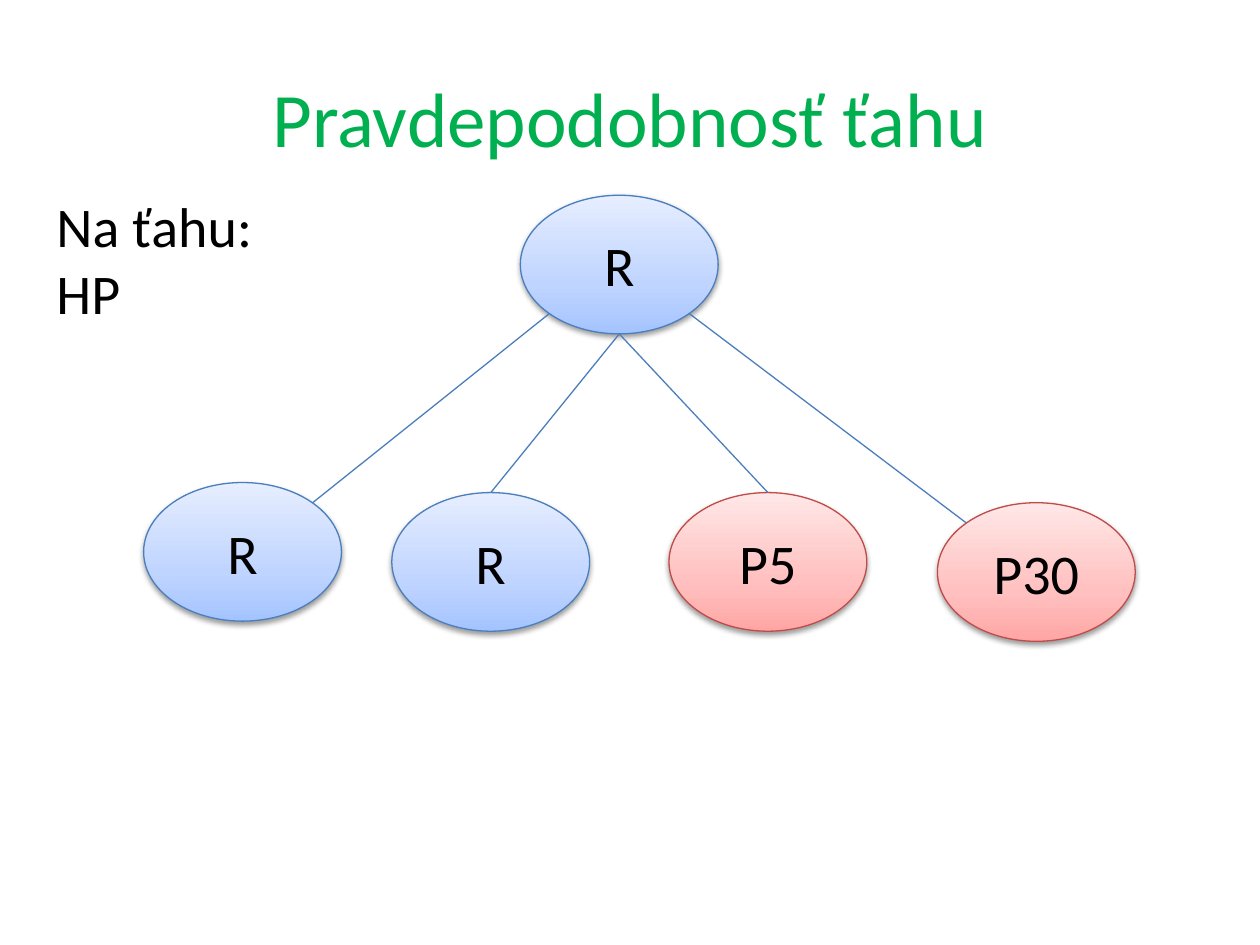
from copy import deepcopy
from math import cos, radians, sin

from lxml.etree import SubElement
from pptx import Presentation
from pptx.dml.color import RGBColor
from pptx.enum.shapes import MSO_CONNECTOR, MSO_SHAPE
from pptx.enum.text import MSO_ANCHOR, MSO_AUTO_SIZE, PP_ALIGN
from pptx.oxml import parse_xml
from pptx.oxml.ns import nsdecls, qn
from pptx.util import Pt

PX = 9144  # 100 px to the inch
FONT = "Calibri"
COLORS = {
    "title": "00B050",
    "text": "000000",
    "blue_line": "4B7EBC",
    "red_line": "BF4C48",
    "shadow": "000000",
}
GRADIENTS = {
    "blue": ((0, "A4C4FF"), (35, "BFD4FF"), (100, "E6EEFF")),
    "red": ((0, "FFA6A5"), (35, "FFC0BF"), (100, "FFE7E7")),
}
NODE_WIDTH, NODE_HEIGHT = 157, 110

# Connection sites of an ellipse, counted counter-clockwise from the top
TOP, TOP_LEFT, BOTTOM_LEFT, BOTTOM, BOTTOM_RIGHT, TOP_RIGHT = 0, 1, 3, 4, 5, 7

# Label, colour, left, top, site on the root, site on the child
CHILDREN = (
    ("R", "blue", 0, 228, BOTTOM_LEFT, TOP_RIGHT),
    ("R", "blue", 197, 236, BOTTOM, TOP),
    ("P5", "red", 417, 236, BOTTOM, TOP),
    ("P30", "red", 630, 244, BOTTOM_RIGHT, TOP_LEFT),
)


def place(shape, left, top, width, height):
    shape.left, shape.top = left * PX, top * PX
    shape.width, shape.height = width * PX, height * PX


def add_text(paragraph, text, size, color, alignment):
    paragraph.alignment = alignment
    run = paragraph.add_run()
    run.text = text
    run.font.name = FONT
    run.font.size = Pt(size)
    run.font.color.rgb = RGBColor.from_string(COLORS[color])


def fill_gradient(shape, stops):
    """Fill from bottom to top through any number of stops."""
    shape.fill.gradient()
    shape.fill.gradient_angle = 90
    stop_list = shape._element.spPr.find(".//" + qn("a:gsLst"))
    for stop in list(stop_list):
        stop_list.remove(stop)
    for percent, color in stops:
        stop = SubElement(stop_list, qn("a:gs"), pos=str(percent * 1000))
        SubElement(stop, qn("a:srgbClr"), val=color)


def add_shadow(shape):
    shape._element.spPr.append(parse_xml(
        f'<a:effectLst {nsdecls("a")}>'
        '<a:outerShdw blurRad="40000" dist="20000" dir="5400000" rotWithShape="0">'
        f'<a:srgbClr val="{COLORS["shadow"]}"><a:alpha val="38000"/></a:srgbClr>'
        '</a:outerShdw></a:effectLst>'))


def add_node(slide, label, color, left, top):
    node = slide.shapes.add_shape(MSO_SHAPE.OVAL, 0, 0, 0, 0)
    place(node, left, top, NODE_WIDTH, NODE_HEIGHT)
    fill_gradient(node, GRADIENTS[color])
    node.line.color.rgb = RGBColor.from_string(COLORS[color + "_line"])
    node.line.width = Pt(0.75)
    add_shadow(node)
    node.text_frame.vertical_anchor = MSO_ANCHOR.MIDDLE
    add_text(node.text_frame.paragraphs[0], label, 32, "text", PP_ALIGN.CENTER)
    return node


def site_point(node, site):
    angle = radians(90 + 45 * site)
    return (round(node.left + node.width / 2 * (1 + cos(angle))),
            round(node.top + node.height / 2 * (1 - sin(angle))))


def add_branch(slide, parent, parent_site, child, child_site):
    branch = slide.shapes.add_connector(
        MSO_CONNECTOR.STRAIGHT,
        *site_point(parent, parent_site), *site_point(child, child_site))
    branch.line.color.rgb = RGBColor.from_string(COLORS["blue_line"])
    branch.line.width = Pt(0.75)
    SubElement(branch._element.spPr, qn("a:effectLst"))
    # begin_connect knows four sites only, an ellipse has eight
    joints = branch._element.find(".//" + qn("p:cNvCxnSpPr"))
    for tag, node, site in (("a:stCxn", parent, parent_site),
                            ("a:endCxn", child, child_site)):
        SubElement(joints, qn(tag), id=str(node.shape_id), idx=str(site))


def add_tree(slide, left, top):
    root = add_node(slide, "R", "blue", left + 299, top)
    for label, color, x, y, root_site, child_site in CHILDREN:
        child = add_node(slide, label, color, left + x, top + y)
        add_branch(slide, root, root_site, child, child_site)


def set_title(slide, left, top, width, height):
    title = slide.shapes.title
    place(title, left, top, width, height)
    title.text_frame.vertical_anchor = MSO_ANCHOR.MIDDLE
    add_text(title.text_frame.paragraphs[0], "Pravdepodobnosť ťahu", 44, "title",
             PP_ALIGN.CENTER)


def add_turn_note(slide, left, top, width, height):
    note = slide.shapes.add_textbox(0, 0, 0, 0)
    place(note, left, top, width, height)
    note.text_frame.word_wrap = True
    note.text_frame.auto_size = MSO_AUTO_SIZE.SHAPE_TO_FIT_TEXT
    add_text(note.text_frame.paragraphs[0], "Na ťahu: HP", 32, "text", PP_ALIGN.LEFT)


def main():
    presentation = Presentation()
    presentation.slide_width, presentation.slide_height = 1000 * PX, 750 * PX
    slide = presentation.slides.add_slide(presentation.slide_layouts[5])
    set_title(slide, 50, 30, 900, 125)
    add_tree(slide, 114, 155)
    add_turn_note(slide, 35, 147, 197, 118)
    presentation.save("out.pptx")


if __name__ == "__main__":
    main()
